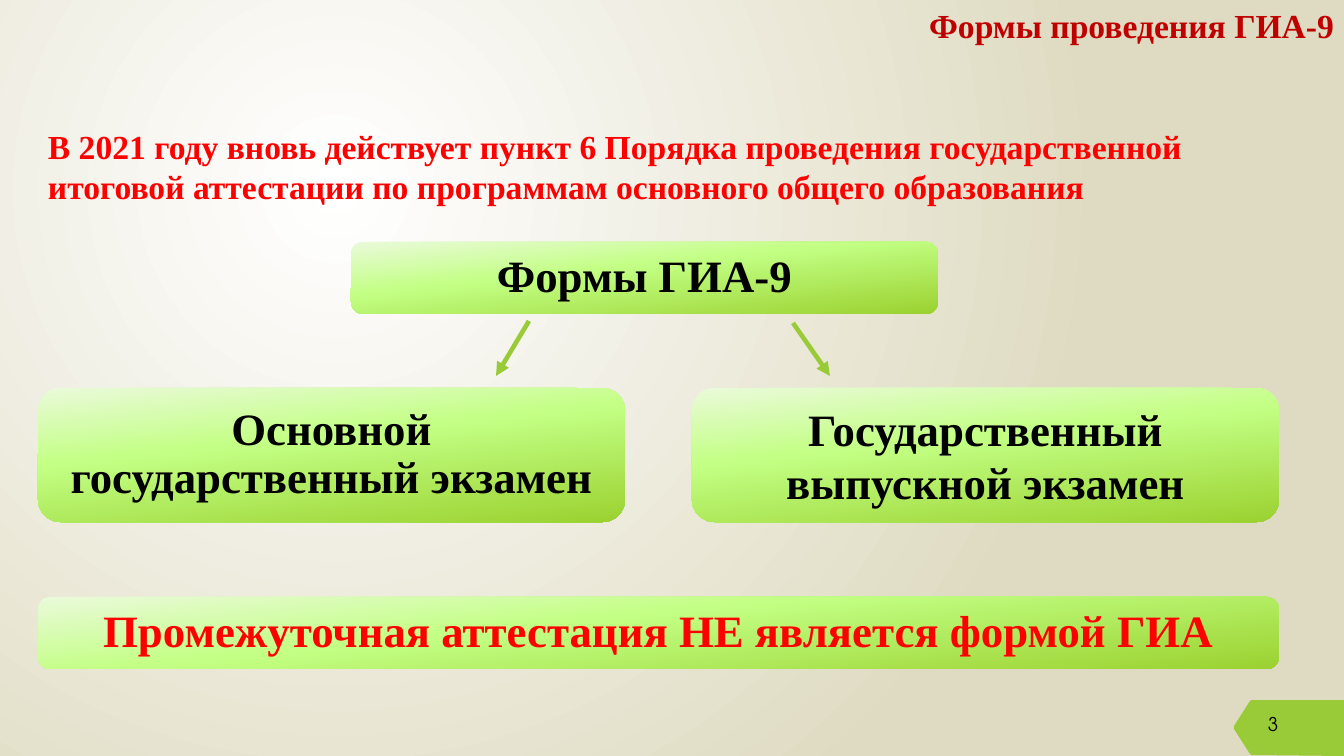
from lxml.etree import SubElement
from pptx import Presentation
from pptx.dml.color import RGBColor
from pptx.enum.shapes import MSO_CONNECTOR, MSO_SHAPE
from pptx.enum.text import MSO_ANCHOR, PP_ALIGN
from pptx.oxml.ns import qn
from pptx.util import Emu, Pt

PX = 914400 / 100.8
THEME = {
    "serif": "Times New Roman",
    "sans": "TeX Gyre Adventor",
    "heading": 24,
    "label": 32,
    "number": 13.5,
    "black": "000000",
    "red": "FF0000",
    "dark_red": "C00000",
    "green": "99CB38",
    "backdrop": [(0, "FFFFFF"), (100, "DFDBC2")],
    "panel": [(0, "EAFADA"), (40, "C3FF84"), (100, "9BD231")],
}


def px(*lengths):
    return [Emu(round(length * PX)) for length in lengths]


def gradient_element(fill, owner, stops):
    """Fill with the given stops; return the gradient without a direction."""
    fill.gradient()
    gradient = owner.xpath(".//a:gradFill")[0]
    for child in list(gradient):
        gradient.remove(child)
    stop_list = SubElement(gradient, qn("a:gsLst"))
    for position, color in stops:
        stop = SubElement(stop_list, qn("a:gs"), pos=str(position * 1000))
        SubElement(stop, qn("a:srgbClr"), val=color)
    return gradient


deck = Presentation()
deck.slide_width, deck.slide_height = px(1344, 756)
page = deck.slides.add_slide(deck.slide_layouts[6])

backdrop = gradient_element(page.background.fill, page.element, THEME["backdrop"])
circle = SubElement(backdrop, qn("a:path"), path="circle")
SubElement(circle, qn("a:fillToRect"), l="50000", t="50000", r="100000", b="100000")

# Page number tag
outline = [(1234, 726), (1250, 701), (1252, 700), (1344, 700),
           (1344, 756), (1252, 755), (1250, 754), (1234, 729)]
builder = page.shapes.build_freeform(*outline[0], scale=PX)
builder.add_line_segments(outline[1:], close=True)
tag = builder.convert_to_shape()
tag.shadow.inherit = False
tag.fill.solid()
tag.fill.fore_color.rgb = RGBColor.from_string(THEME["green"])
tag.line.fill.background()

# Text boxes and panels: text, frame, is panel, font, size, color, alignment, spacing
heading = {"name": THEME["serif"], "size": Pt(THEME["heading"]), "bold": True}
label = {"name": THEME["serif"], "size": Pt(THEME["label"]), "bold": True}
number = {"name": THEME["sans"], "size": Pt(THEME["number"]), "bold": False}
tight = {"line_spacing": 0.9, "space_after": Pt(THEME["label"] * 0.35)}
left, center, right = PP_ALIGN.LEFT, PP_ALIGN.CENTER, PP_ALIGN.RIGHT
blocks = [
    ("Формы проведения ГИА-9", (343, 0, 1001, 66),
     False, heading, "dark_red", right, {}),
    ("3", (1258, 708, 86, 40), False, number, "black", left, {}),
    ("В 2021 году вновь действует пункт 6 Порядка проведения государственной "
     "итоговой аттестации по программам основного общего образования",
     (38, 121, 1241, 92), False, heading, "red", left, {}),
    ("Основной государственный экзамен", (38, 388, 587, 134),
     True, label, "black", center, tight),
    ("Государственный выпускной экзамен", (692, 388, 587, 134),
     True, label, "black", center, {}),
    ("Формы ГИА-9", (351, 242, 587, 72), True, label, "black", center, tight),
    ("Промежуточная аттестация НЕ является формой ГИА", (38, 597, 1241, 72),
     True, label, "red", center, tight),
]
for text, frame, is_panel, font, color, alignment, spacing in blocks:
    if is_panel:
        box = page.shapes.add_shape(MSO_SHAPE.ROUNDED_RECTANGLE, *px(*frame))
        box.shadow.inherit = False
        box.line.fill.background()
        gradient = gradient_element(box.fill, box.element, THEME["panel"])
        SubElement(gradient, qn("a:lin"), ang=str(84 * 60000), scaled="0")
    else:
        box = page.shapes.add_textbox(*px(*frame))
    box.text_frame.word_wrap = True
    box.text_frame.vertical_anchor = MSO_ANCHOR.MIDDLE if is_panel else MSO_ANCHOR.TOP
    para = box.text_frame.paragraphs[0]
    para.alignment = alignment
    for name, value in spacing.items():
        setattr(para, name, value)
    span = para.add_run()
    span.text = text
    for name, value in font.items():
        setattr(span.font, name, value)
    span.font.color.rgb = RGBColor.from_string(THEME[color])

# Arrows from the heading panel to the two exam forms
for ends in [(529, 321, 496, 376), (793, 323, 830, 376)]:
    arrow = page.shapes.add_connector(MSO_CONNECTOR.STRAIGHT, *px(*ends))
    arrow.line.width = Pt(3.25)
    arrow.line.color.rgb = RGBColor.from_string(THEME["green"])
    SubElement(arrow.line._get_or_add_ln(), qn("a:tailEnd"), type="triangle")
    SubElement(arrow.element.spPr, qn("a:effectLst"))

deck.save("out.pptx")
